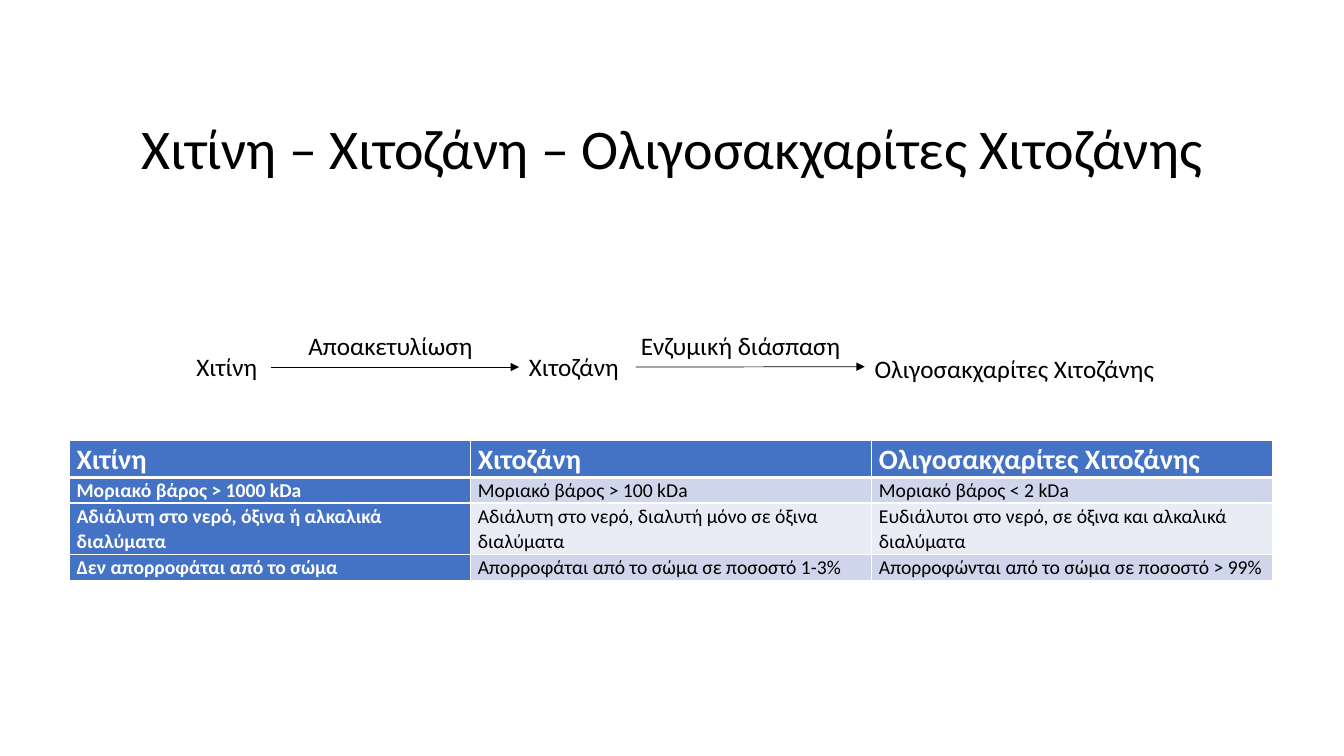
from lxml import etree
from pptx import Presentation
from pptx.dml.color import RGBColor
from pptx.enum.shapes import MSO_CONNECTOR
from pptx.enum.text import MSO_ANCHOR, MSO_AUTO_SIZE, PP_ALIGN
from pptx.oxml.ns import qn
from pptx.util import Cm, Pt

STRAIGHT = MSO_CONNECTOR.STRAIGHT
BOTTOM = MSO_ANCHOR.BOTTOM
GROW = MSO_AUTO_SIZE.SHAPE_TO_FIT_TEXT
NO_RESIZE = MSO_AUTO_SIZE.NONE
CENTER = PP_ALIGN.CENTER
LEFT_SIDE, RIGHT_SIDE = 1, 3

BLACK, WHITE, BLUE = "000000", "FFFFFF", "4472C4"
BANDS = ["CFD5EA", "E9EBF5"]


def format_text(text_frame, size, color, bold=False):
    for paragraph in text_frame.paragraphs:
        for run in paragraph.runs:
            run.font.name = "Calibri"
            run.font.size = Pt(size)
            run.font.bold = bold
            run.font.color.rgb = RGBColor.from_string(color)


def add_text(text, left, top, width, height, size=18, wrap=True):
    box = slide.shapes.add_textbox(Cm(left), Cm(top), Cm(width), Cm(height))
    text_frame = box.text_frame
    text_frame.text = text
    text_frame.word_wrap = wrap
    text_frame.auto_size = GROW
    format_text(text_frame, size, BLACK)
    return box


presentation = Presentation()
presentation.slide_width = Cm(33.87)
presentation.slide_height = Cm(19.05)
slide = presentation.slides.add_slide(presentation.slide_layouts[6])

# Comparison table
rows = [
    ["Χιτίνη", "Χιτοζάνη", "Ολιγοσακχαρίτες Χιτοζάνης"],
    ["Μοριακό βάρος > 1000 kDa", "Μοριακό βάρος > 100 kDa", "Μοριακό βάρος < 2 kDa"],
    ["Αδιάλυτη στο νερό, όξινα ή αλκαλικά διαλύματα",
     "Αδιάλυτη στο νερό, διαλυτή μόνο σε όξινα διαλύματα",
     "Ευδιάλυτοι στο νερό, σε όξινα και αλκαλικά διαλύματα"],
    ["Δεν απορροφάται από το σώμα",
     "Απορροφάται από το σώμα σε ποσοστό 1-3%",
     "Απορροφώνται από το σώμα σε ποσοστό > 99%"],
]
row_heights = [0.93, 0.64, 1.3, 0.64]
table = slide.shapes.add_table(
    len(rows), len(rows[0]), Cm(1.75), Cm(11.1), Cm(30.33), Cm(sum(row_heights))).table
table.first_col = True
for column in table.columns:
    column.width = Cm(10.11)

for row_index, row in enumerate(rows):
    table.rows[row_index].height = Cm(row_heights[row_index])
    for column_index, text in enumerate(row):
        cell = table.cell(row_index, column_index)
        is_top = row_index == 0
        is_header = is_top or column_index == 0
        cell.text = text
        cell.margin_left = cell.margin_right = Cm(0.18)
        cell.margin_top = cell.margin_bottom = 0
        paragraph = cell.text_frame.paragraphs[0]
        paragraph.line_spacing = 1.07
        paragraph.space_after = Pt(8)
        format_text(cell.text_frame, 20 if is_top else 14,
                    WHITE if is_header else BLACK, is_header)

        cell_properties = cell._tc.get_or_add_tcPr()
        for side in ["lnL", "lnR", "lnT", "lnB"]:
            heavy = (is_top and side == "lnB") or (row_index == 1 and side == "lnT")
            border = etree.SubElement(cell_properties, qn(f"a:{side}"),
                                      w=str(Pt(3 if heavy else 1)))
            border_fill = etree.SubElement(border, qn("a:solidFill"))
            etree.SubElement(border_fill, qn("a:srgbClr"), val=WHITE)
        cell.fill.solid()
        cell.fill.fore_color.rgb = RGBColor.from_string(
            BLUE if is_header else BANDS[(row_index - 1) % 2])

# Reaction chain
chitin = add_text("Χιτίνη", 4.7, 8.74, 2.13, 1.02)
chitosan = add_text("Χιτοζάνη", 13.08, 8.74, 2.94, 1.02)
oligosaccharides = add_text("Ολιγοσακχαρίτες Χιτοζάνης", 21.79, 8.72, 7.6, 1.04)
oligosaccharides_paragraph = oligosaccharides.text_frame.paragraphs[0]
oligosaccharides_paragraph.line_spacing = 1.07
oligosaccharides_paragraph.space_after = Pt(8)

for source, target in [(chitin, chitosan), (chitosan, oligosaccharides)]:
    arrow = slide.shapes.add_connector(STRAIGHT, 0, 0, 0, 0)
    arrow.begin_connect(source, RIGHT_SIDE)
    arrow.end_connect(target, LEFT_SIDE)
    arrow.line.width = Pt(0.5)
    arrow.line.color.rgb = RGBColor.from_string(BLACK)
    etree.SubElement(arrow.line._get_or_add_ln(), qn("a:tailEnd"), type="triangle")
    etree.SubElement(arrow._element.spPr, qn("a:effectLst"))

add_text("Αποακετυλίωση", 7.52, 8.2, 4.7, 1.02, wrap=False)
add_text("Ενζυμική διάσπαση", 15.9, 8.2, 5.59, 1.02, wrap=False)

# Title
title = add_text("Χιτίνη – Χιτοζάνη – Ολιγοσακχαρίτες Χιτοζάνης",
                 2.33, 1.01, 29.21, 3.68, size=40)
title.text_frame.auto_size = NO_RESIZE
title.text_frame.vertical_anchor = BOTTOM
title_paragraph = title.text_frame.paragraphs[0]
title_paragraph.alignment = CENTER
title_paragraph.line_spacing = 0.9

presentation.save("out.pptx")
